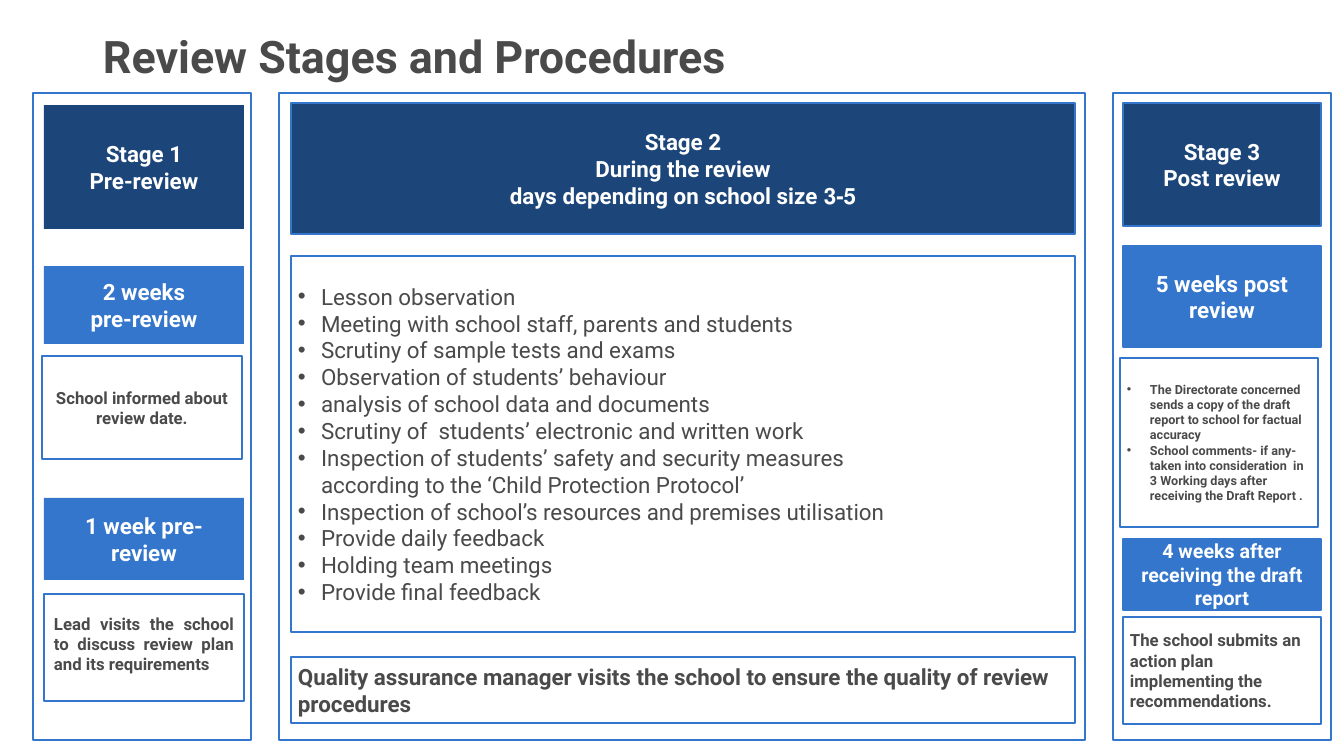
import pptx
import pptx.util
import pptx.dml.color
import pptx.enum.shapes
import pptx.enum.text
import pptx.oxml.ns
import lxml.etree

TITLE = "Review Stages and Procedures"
ACTIVITIES = [
    "Lesson observation",
    "Meeting with school staff, parents and students",
    "Scrutiny of sample tests and exams",
    "Observation of students’ behaviour",
    "analysis of school data and documents",
    "Scrutiny of  students’ electronic and written work",
    "Inspection of students’ safety and security measures",
    "according to the ‘Child Protection Protocol’",
    "Inspection of school’s resources and premises utilisation",
    "Provide daily feedback",
    "Holding team meetings",
    "Provide final feedback",
]
CONTINUATION = ACTIVITIES[7]
RIGHT_TO_LEFT = "3-5 days depending on school size"
DRAFT_STEPS = [
    "The Directorate concerned sends a copy of the draft report to school for factual accuracy",
    "School comments- if any- taken into consideration  in 3 Working days after receiving the Draft Report .",
]
QUALITY = "Quality assurance manager visits the school to ensure the quality of review procedures"
LEAD_VISIT = "Lead visits the school to discuss review plan and its requirements"
ACTION_PLAN = ["The school submits an action plan implementing the", "recommendations."]

COLORS = {"navy": "1C4679", "blue": "3376CC", "white": "FFFFFF", "text": "4A4A4A"}
FONT = "Roboto"
ALIGN = pptx.enum.text.PP_ALIGN
NARROW = (7, 4, 7, 4)
WIDE = (10, 5, 10, 5)

BASE = {"fill": "white", "line": "blue", "color": "text", "size": 12, "bold": True,
        "align": ALIGN.LEFT, "margins": WIDE, "bullets": False, "body": False}
HEADER = BASE | {"fill": "navy", "color": "white", "size": 16, "align": ALIGN.CENTER}
STEP = HEADER | {"fill": "blue"}
NOTE = BASE | {"align": ALIGN.CENTER}
VISIT = BASE | {"align": ALIGN.JUSTIFY, "margins": (10, 5, 10, 13)}
ACTIVITY_LIST = BASE | {"size": 16, "bold": False, "align": ALIGN.JUSTIFY,
                        "margins": NARROW, "bullets": True, "body": True}
DRAFT_LIST = BASE | {"size": 9, "margins": NARROW, "bullets": True}
QUALITY_NOTE = BASE | {"size": 16, "margins": NARROW}
PLAN_NOTE = BASE | {"margins": NARROW}
UNLINED = {"line": None}

FRAME_TOP, FRAME_HEIGHT = 93, 647
STAGES = [
    {"frame": (33, 218), "cards": (44, 200), "content": [
        (105, 124, 0, HEADER | UNLINED, ["Stage 1", "Pre-review"]),
        (266, 78, 0, STEP | UNLINED, ["2 weeks", "pre-review"]),
        (356, 103, -2, NOTE, ["School informed about review date."]),
        (498, 82, 0, STEP | UNLINED, ["1 week pre- review"]),
        (594, 107, 0, VISIT, [LEAD_VISIT]),
    ]},
    {"frame": (279, 806), "cards": (291, 784), "content": [
        (103, 131, 0, HEADER, ["Stage 2", "During the review", RIGHT_TO_LEFT]),
        (256, 376, 0, ACTIVITY_LIST, ACTIVITIES),
        (657, 66, 0, QUALITY_NOTE, [QUALITY]),
    ]},
    {"frame": (1113, 218), "cards": (1123, 198), "content": [
        (103, 123, 0, HEADER, ["Stage 3", "Post review"]),
        (246, 101, 0, STEP, ["5 weeks post review"]),
        (358, 169, -3, DRAFT_LIST, DRAFT_STEPS),
        (539, 71, 0, STEP | {"size": 14}, ["4 weeks after receiving the draft report"]),
        (617, 107, 0, PLAN_NOTE, ACTION_PLAN),
    ]},
]
SLIDE_WIDTH, SLIDE_HEIGHT = 1344, 756
SCALE = 12192000 / SLIDE_WIDTH
INDENT = 23


def emu(px):
    return pptx.util.Emu(round(px * SCALE))


def rgb(name):
    return pptx.dml.color.RGBColor.from_string(COLORS[name])


def apply(target, values):
    for key, value in values.items():
        setattr(target, key, value)


def place(part, left, top, width, height):
    apply(part, {"left": emu(left), "top": emu(top),
                 "width": emu(width), "height": emu(height)})


def paint(part, fill, line):
    if fill:
        part.fill.solid()
        part.fill.fore_color.rgb = rgb(fill)
    else:
        part.fill.background()
    if line:
        part.line.color.rgb = rgb(line)
        part.line.width = pptx.util.Pt(1.5)
    else:
        part.line.fill.background()


def add_box(slide):
    box = slide.shapes.add_shape(pptx.enum.shapes.MSO_SHAPE.RECTANGLE, 0, 0, 0, 0)
    box.shadow.inherit = False
    return box


def set_bullet(paragraph, shown):
    properties = paragraph._p.get_or_add_pPr()
    properties.set("marL", str(emu(INDENT)))
    properties.set("indent", str(emu(-INDENT if shown else 0)))
    qn = pptx.oxml.ns.qn
    if shown:
        lxml.etree.SubElement(properties, qn("a:buFont"), typeface="Arial")
        lxml.etree.SubElement(properties, qn("a:buChar"), char="•")
    else:
        lxml.etree.SubElement(properties, qn("a:buNone"))


def write(part, lines, style, spacing=1.0):
    frame = part.text_frame
    left, top, right, bottom = map(emu, style["margins"])
    apply(frame, {"word_wrap": True, "auto_size": pptx.enum.text.MSO_AUTO_SIZE.NONE,
                  "vertical_anchor": pptx.enum.text.MSO_ANCHOR.MIDDLE,
                  "margin_left": left, "margin_top": top,
                  "margin_right": right, "margin_bottom": bottom})
    for index, line in enumerate(lines):
        paragraph = frame.add_paragraph() if index else frame.paragraphs[0]
        if style["bullets"]:
            set_bullet(paragraph, line != CONTINUATION)
        if line == RIGHT_TO_LEFT:
            paragraph._p.get_or_add_pPr().set("rtl", "1")
        apply(paragraph, {"alignment": style["align"], "line_spacing": spacing,
                          "space_before": pptx.util.Pt(0)})
        run = paragraph.add_run()
        run.text = line
        apply(run.font, {"name": FONT, "size": pptx.util.Pt(style["size"]),
                         "bold": style["bold"]})
        run.font.color.rgb = rgb(style["color"])


def main():
    deck = pptx.Presentation()
    apply(deck, {"slide_width": emu(SLIDE_WIDTH), "slide_height": emu(SLIDE_HEIGHT)})
    slide = deck.slides.add_slide(deck.slide_layouts[1])
    title = slide.shapes.title
    place(title, 93, 18, 1124, 82)
    write(title, [TITLE], BASE | {"size": 32}, 0.9)

    for stage in STAGES:
        frame_left, frame_width = stage["frame"]
        outline = add_box(slide)
        place(outline, frame_left, FRAME_TOP, frame_width, FRAME_HEIGHT)
        paint(outline, None, "blue")
        left, width = stage["cards"]
        for top, height, shift, style, lines in stage["content"]:
            card = slide.placeholders[1] if style["body"] else add_box(slide)
            place(card, left + shift, top, width, height)
            paint(card, style["fill"], style["line"])
            write(card, lines, style)

    deck.save("out.pptx")


if __name__ == "__main__":
    main()
